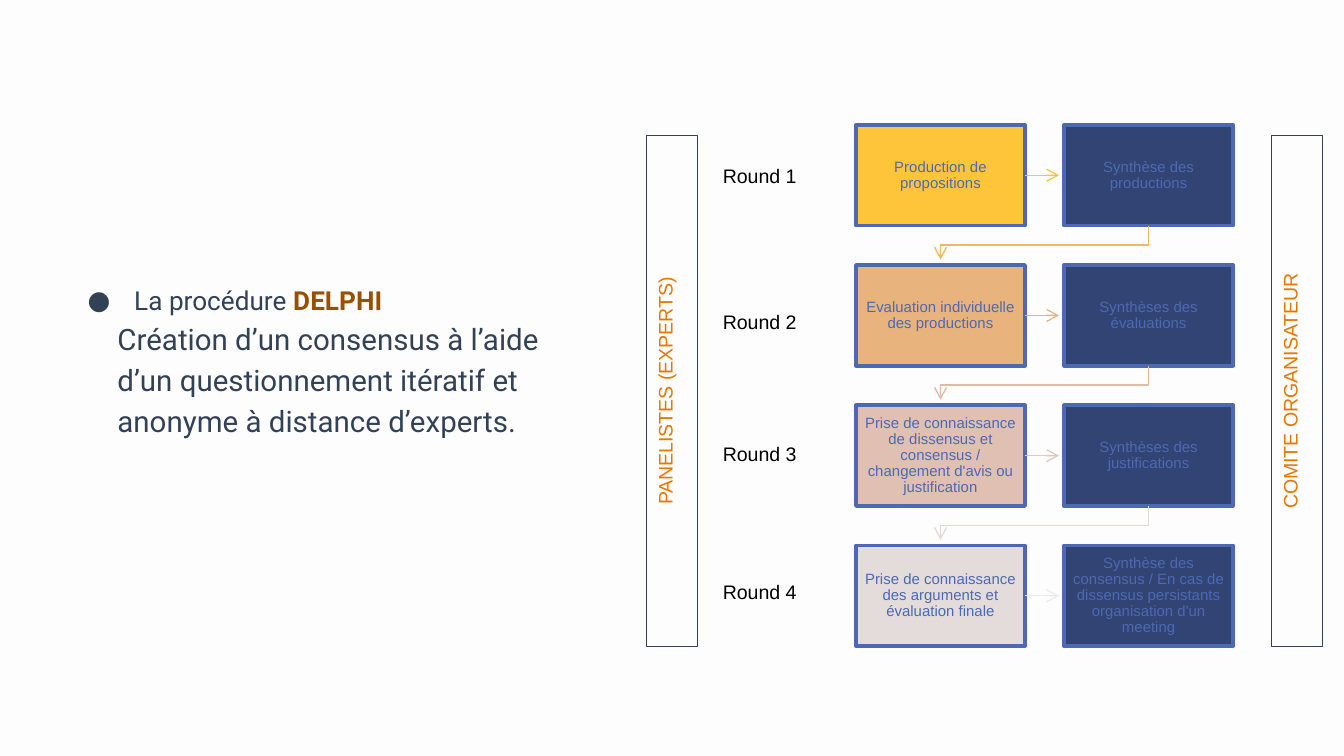
from lxml import etree
from pptx import Presentation
from pptx import util as u
from pptx.dml import color
from pptx.enum import shapes, text
from pptx.oxml import ns

Pt = u.Pt
LEFT, RIGHT, TOP = 458.6, 570.1, 66.9
WIDE, HIGH, STEP = 90.5, 54, 75.1
BLUE, NAVY, SLATE = "4C69B2", "314474", "334157"
ROUNDS = [
    ("Production de propositions", "Synthèse des productions", "FFC53A", "FFC53A", "F1B662", 84.2),
    ("Evaluation individuelle des productions", "Synthèses des évaluations", "E9B37D", "E7B486", "E1BBA6", 162.7),
    ("Prise de connaissance de dissensus et consensus / changement d'avis ou justification",
     "Synthèses des justifications", "E0C0B2", "E0C9C1", "E3DAD8", 233.3),
    ("Prise de connaissance des arguments et évaluation finale",
     "Synthèse des consensus / En cas de dissensus persistants organisation d'un meeting",
     "E4DCDB", "EBEBEB", None, 307.4),
]


def rgb(code):
    """Turn a hex string into a colour."""
    return color.RGBColor.from_string(code)


def add(node, tag, **attrs):
    """Append a drawing element to an XML node."""
    return etree.SubElement(node, ns.qn(tag), **attrs)


def write(para, words, size, code, font="Arial", bold=False):
    """Add one styled run to a paragraph."""
    run = para.add_run()
    run.text = words
    run.font.size, run.font.name, run.font.bold = Pt(size), font, bold
    run.font.color.rgb = rgb(code)


def inset(frame, side, top):
    """Set the inner margins of a text frame and let it wrap."""
    frame.margin_left = frame.margin_right = Pt(side)
    frame.margin_top = frame.margin_bottom = Pt(top)
    frame.word_wrap = True


def rect(slide, left, top, wide, high, fill, line, width):
    """Draw a plain rectangle, unfilled when fill is None."""
    box = slide.shapes.add_shape(shapes.MSO_SHAPE.RECTANGLE, Pt(left), Pt(top), Pt(wide), Pt(high))
    box.shadow.inherit = False
    if fill:
        box.fill.solid()
        box.fill.fore_color.rgb = rgb(fill)
    else:
        box.fill.background()
    box.line.color.rgb = rgb(line)
    box.line.width = Pt(width)
    return box


def card(slide, left, top, words, fill):
    """Draw one step of the procedure."""
    box = rect(slide, left, top, WIDE, HIGH, fill, BLUE, 2)
    frame = box.text_frame
    inset(frame, 4.3, 4.3)
    frame.vertical_anchor = text.MSO_ANCHOR.MIDDLE
    para = frame.paragraphs[0]
    para.alignment = text.PP_ALIGN.CENTER
    para.line_spacing = 0.9
    write(para, words, 8, BLUE)
    return box


def style(line, code):
    """Give a line its colour, width and open arrowhead."""
    line.color.rgb = rgb(code)
    line.width = Pt(0.75)
    add(line._get_or_add_ln(), "a:tailEnd", type="arrow")


def across(slide, start, top, code):
    """Draw the arrow from a panel step towards its synthesis."""
    mid = Pt(top + HIGH / 2)
    arrow = slide.shapes.add_connector(shapes.MSO_CONNECTOR.STRAIGHT, Pt(LEFT + WIDE), mid, Pt(567.4), mid)
    arrow.begin_connect(start, 3)
    style(arrow.line, code)
    add(arrow._element.spPr, "a:effectLst")


def down(slide, top, code):
    """Draw the bent arrow from a synthesis to the next round."""
    low, near, far = top + HIGH, LEFT + WIDE / 2, RIGHT + WIDE / 2
    pen = slide.shapes.build_freeform(Pt(far), Pt(low))
    spots = [(far, low + 10.4), (near, low + 10.4), (near, low + 18.2)]
    pen.add_line_segments([(Pt(x), Pt(y)) for x, y in spots], close=False)
    arrow = pen.convert_to_shape()
    arrow.shadow.inherit = False
    arrow.fill.background()
    style(arrow.line, code)


def label(slide, top, words):
    """Write the name of a round."""
    box = slide.shapes.add_textbox(Pt(380.2), Pt(top), Pt(69.8), Pt(20))
    inset(box.text_frame, 7.2, 3.6)
    write(box.text_frame.paragraphs[0], words, 10.5, "000000")


def banner(slide, left, words):
    """Draw a tall bar with text that reads upwards."""
    box = rect(slide, left, 72.6, 27.4, 273.8, None, SLATE, 0.75)
    frame = box.text_frame
    inset(frame, 7.2, 3.6)
    frame.vertical_anchor = text.MSO_ANCHOR.TOP
    frame._txBody.bodyPr.set("vert", "vert270")
    para = frame.paragraphs[0]
    para.alignment = text.PP_ALIGN.CENTER
    write(para, words, 10.5, "E77700")


def intro(slide):
    """Write the bulleted heading and its explanation."""
    box = slide.shapes.add_textbox(Pt(28.8), Pt(142.8), Pt(288.7), Pt(205))
    frame = box.text_frame
    inset(frame, 7.2, 7.2)
    head, body = frame.paragraphs[0], frame.add_paragraph()
    props = head._p.get_or_add_pPr()
    props.set("marL", str(Pt(36)))
    props.set("indent", str(Pt(-25)))
    add(add(props, "a:buClr"), "a:srgbClr", val=SLATE)
    add(props, "a:buFont", typeface="Roboto")
    add(props, "a:buChar", char="●")
    body._p.get_or_add_pPr().set("marL", str(Pt(27)))
    head.line_spacing = body.line_spacing = 1.15
    write(head, "La procédure ", 14, SLATE, "Roboto")
    write(head, "DELPHI", 14, "9A4F00", "Roboto", True)
    write(body, "Création d’un consensus à l’aide d’un questionnement itératif et anonyme "
          "à distance d’experts.", 15.8, SLATE, "Roboto")


def main():
    """Build the slide and save it."""
    deck = Presentation()
    deck.slide_width, deck.slide_height = Pt(720), Pt(405)
    slide = deck.slides.add_slide(deck.slide_layouts[6])
    slide.background.fill.solid()
    slide.background.fill.fore_color.rgb = rgb("FDFDFD")
    intro(slide)
    for row, (task, recap, fill, link, bend, mark) in enumerate(ROUNDS):
        top = TOP + row * STEP
        step = card(slide, LEFT, top, task, fill)
        across(slide, step, top, link)
        card(slide, RIGHT, top, recap, NAVY)
        if bend:
            down(slide, top, bend)
        label(slide, mark, f"Round {row + 1}")
    banner(slide, 346.3, "PANELISTES (EXPERTS)")
    banner(slide, 681.1, "COMITE ORGANISATEUR")
    deck.save("out.pptx")


if __name__ == "__main__":
    main()
